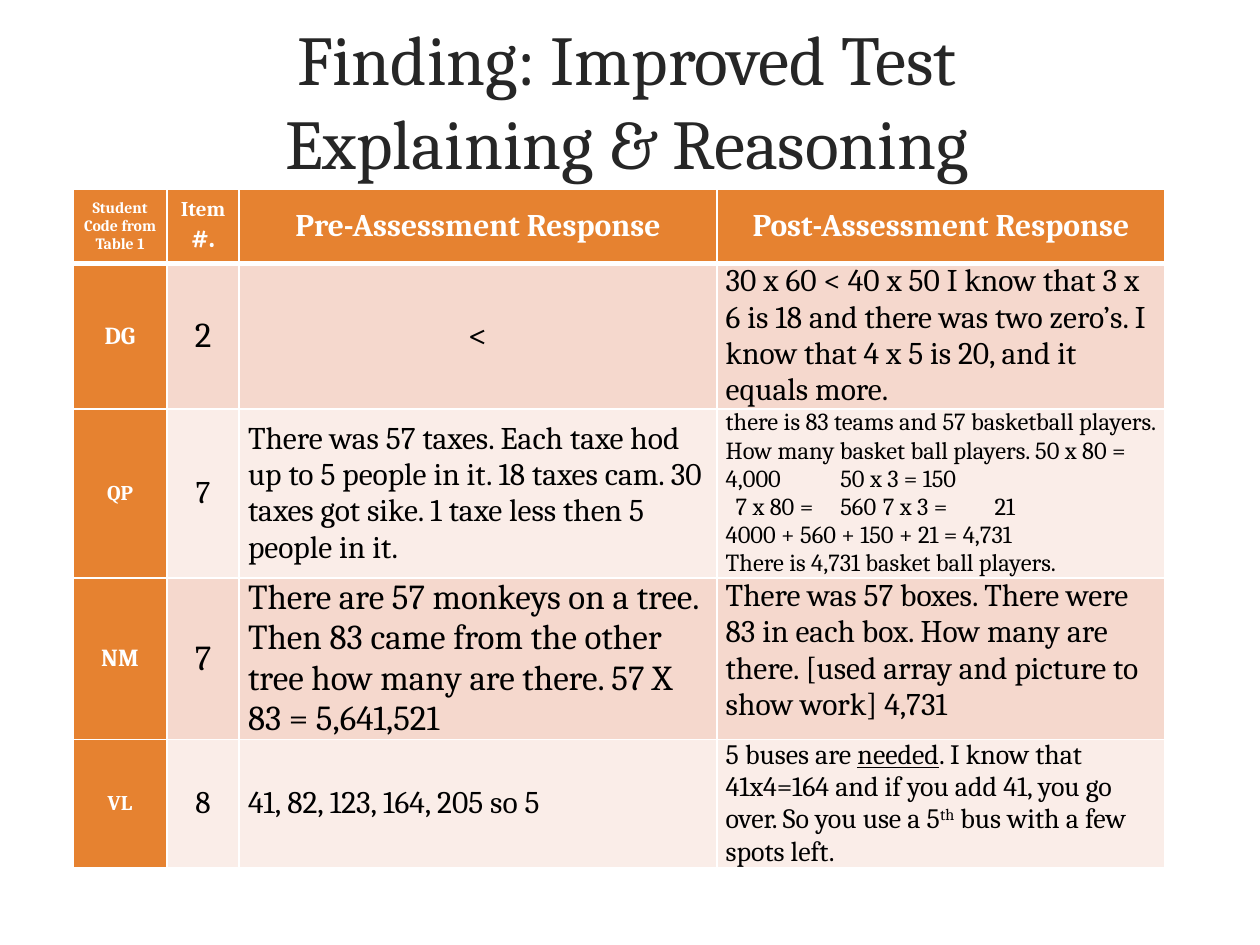
from lxml.etree import SubElement
from pptx import Presentation
from pptx.dml.color import RGBColor
from pptx.enum.text import MSO_ANCHOR as Anchor, MSO_AUTO_SIZE as AutoSize, PP_ALIGN as Align
from pptx.oxml.ns import qn
from pptx.util import Cm, Pt

COLORS = {
    "title": "262626",
    "accent": "E68230",
    "dark_band": "F5D8CD",
    "light_band": "FAEDE8",
    "white": "FFFFFF",
    "black": "000000",
}
FONT = "Cambria"
COLUMN_WIDTHS = [1.9, 1.45, 9.63, 9.04]
ROW_HEIGHTS = [1.5, 1.6, 3.23, 2.06, 2.16]
TAB_STOPS = [0.2, 2.31, 3.17, 5.42, 7.06]

HEADERS = [
    ("Student Code from Table 1", 9),
    ([("Item ", {"size": 12}), ("#.", {})], 16),
    ("Pre-Assessment Response", 18),
    ("Post-Assessment Response", 18),
]
BUS_ANSWER = [
    ("5 buses are ", {}),
    ("needed", {"underline": True}),
    (". I know that 41x4=164 and if you add 41, you go over. So you use a 5", {}),
    ("th", {"baseline": 30000}),
    (" bus with a few spots left.", {}),
]
STUDENTS = [
    [("DG", 14), ("2", 20), ("<", 20),
     ("30 x 60 < 40 x 50 I know that 3 x 6 is 18 and there was two zero’s. "
      "I know that 4 x 5 is 20, and it equals more.", 18)],
    [("QP", 12), ("7", 18),
     ("There was 57 taxes. Each taxe hod up to 5 people in it. 18 taxes cam. "
      "30 taxes got sike. 1 taxe less then 5 people in it.", 18),
     ("there is 83 teams and 57 basketball players. How many basket ball players. "
      "50 x 80 = 4,000\t50 x 3 = 150\n"
      "\t7 x 80 =\t560\t7 x 3 =\t21\n"
      "4000 + 560 + 150 + 21 = 4,731\n"
      "There is 4,731 basket ball players.", 14)],
    [("NM", 14), ("7", 20),
     ("There are 57 monkeys on a tree. Then 83 came from the other tree "
      "how many are there. 57 X 83 = 5,641,521", 20),
     ("There was 57 boxes. There were 83 in each box. How many are there. "
      "[used array and picture to show work] 4,731", 18)],
    [("VL", 12), ("8", 18), ("41, 82, 123, 164, 205 so 5", 18), (BUS_ANSWER, 16)],
]


def rgb(name):
    return RGBColor.from_string(COLORS[name])


def style_font(font, size, color, bold=False):
    font.name = FONT
    font.size = Pt(size)
    font.bold = bold
    font.color.rgb = rgb(color)


def add_tab_stops(para):
    tabs = SubElement(para._p.get_or_add_pPr(), qn("a:tabLst"))
    for stop in TAB_STOPS:
        SubElement(tabs, qn("a:tab"), pos=str(Cm(stop)), algn="l")


def add_spans(para, spans):
    for text, options in spans:
        span = para.add_run()
        span.text = text
        if "size" in options:
            span.font.size = Pt(options["size"])
        if "underline" in options:
            span.font.underline = options["underline"]
        if "baseline" in options:
            span._r.get_or_add_rPr().set("baseline", str(options["baseline"]))


def write_cell(cell, content, size, color, bold, align):
    if isinstance(content, str):
        lines = [[(line, {})] for line in content.split("\n")]
    else:
        lines = [content]
    frame = cell.text_frame
    for index, spans in enumerate(lines):
        para = frame.add_paragraph() if index else frame.paragraphs[0]
        para.alignment = align
        if any("\t" in text for text, _ in spans):
            add_tab_stops(para)
        style_font(para.font, size, color, bold)
        add_spans(para, spans)


def set_borders(cell, top=1, bottom=1):
    properties = cell._tc.get_or_add_tcPr()
    for side, width in (("L", 1), ("R", 1), ("T", top), ("B", bottom)):
        line = SubElement(properties, qn(f"a:ln{side}"), w=str(Pt(width)))
        fill = SubElement(line, qn("a:solidFill"))
        SubElement(fill, qn("a:srgbClr"), val=COLORS["white"])


def format_cell(cell, row, column):
    set_borders(cell, top=3 if row == 1 else 1, bottom=3 if row == 0 else 1)
    cell.margin_left = cell.margin_right = Cm(0.18)
    cell.margin_top = cell.margin_bottom = 0
    cell.vertical_anchor = Anchor.TOP if row and column == 3 else Anchor.MIDDLE
    if row == 0 or column == 0:
        band = "accent"
    else:
        band = "dark_band" if row % 2 else "light_band"
    cell.fill.solid()
    cell.fill.fore_color.rgb = rgb(band)


def add_title(page):
    title = page.shapes.title
    title.left, title.top, title.width, title.height = Cm(1.47), 0, Cm(22.33), Cm(4.01)
    frame = title.text_frame
    frame.auto_size = AutoSize.NONE
    frame.vertical_anchor = Anchor.MIDDLE
    frame.text = "Finding: Improved Test\vExplaining & Reasoning"
    para = frame.paragraphs[0]
    para.alignment = Align.CENTER
    style_font(para.font, 40, "title")


def add_responses(page):
    rows = [HEADERS] + STUDENTS
    shape = page.shapes.add_table(len(rows), len(HEADERS), Cm(1.47), Cm(3.81),
                                  Cm(sum(COLUMN_WIDTHS)), Cm(14.2))
    table = shape.table
    for column, width in zip(table.columns, COLUMN_WIDTHS):
        column.width = Cm(width)
    for row, height in zip(table.rows, ROW_HEIGHTS):
        row.height = Cm(height)
    shape.height = Cm(14.2)
    for r, entries in enumerate(rows):
        for c, (content, size) in enumerate(entries):
            cell = table.cell(r, c)
            format_cell(cell, r, c)
            heading = r == 0 or c == 0
            centred = heading or c == 1 or content == "<"
            write_cell(cell, content, size, "white" if heading else "black",
                       heading, Align.CENTER if centred else Align.LEFT)


def main():
    deck = Presentation()
    deck.slide_width, deck.slide_height = Cm(25.4), Cm(19.05)
    page = deck.slides.add_slide(deck.slide_layouts[5])
    add_title(page)
    add_responses(page)
    deck.save("out.pptx")


if __name__ == "__main__":
    main()
